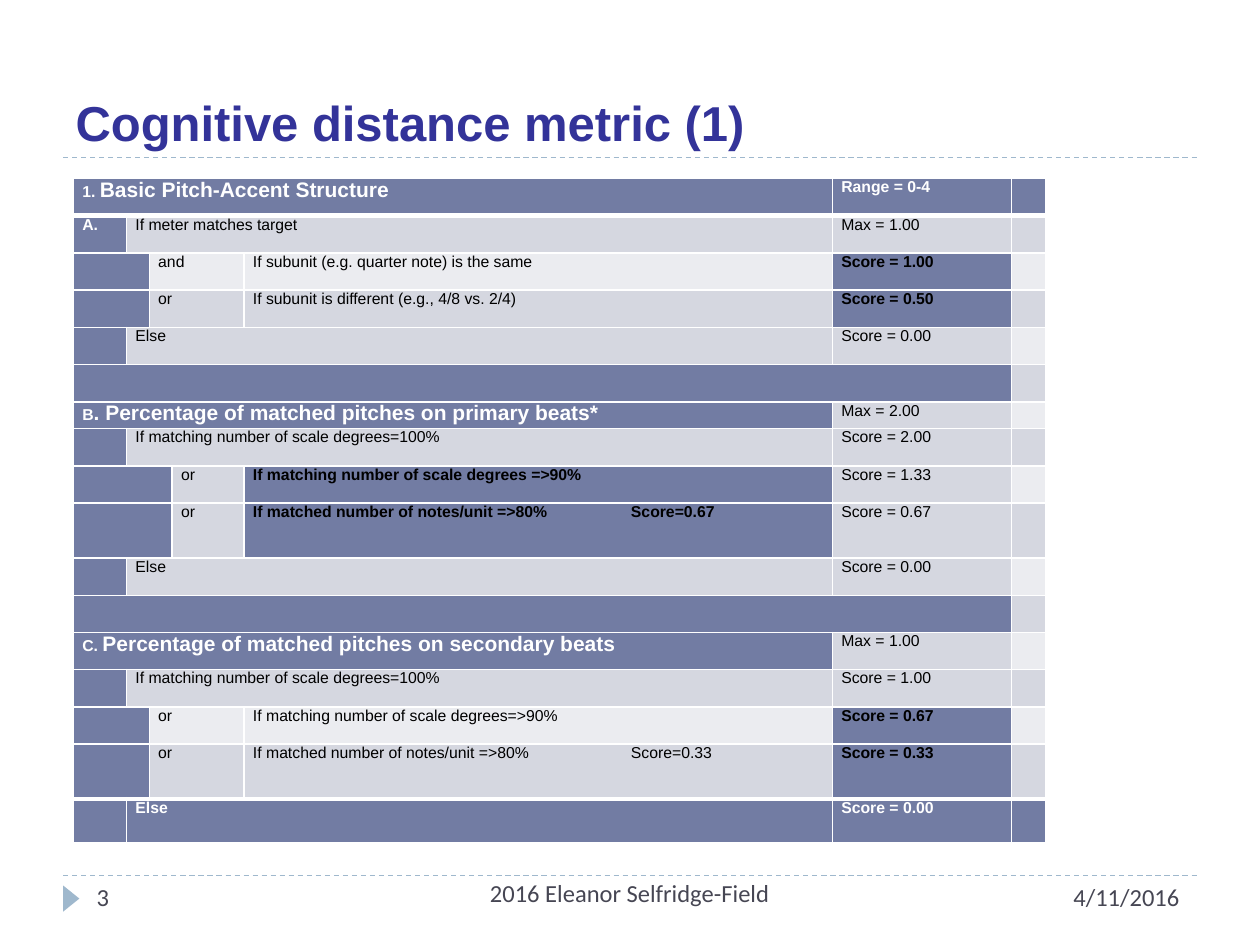
from lxml.etree import SubElement
from pptx import Presentation
from pptx.dml.color import RGBColor
from pptx.enum.dml import MSO_LINE_DASH_STYLE as DashStyle
from pptx.enum.shapes import MSO_CONNECTOR as Connector, MSO_SHAPE as Shape
from pptx.enum.text import MSO_ANCHOR as Anchor, MSO_AUTO_SIZE as AutoSize, PP_ALIGN as Align
from pptx.oxml.ns import qn
from pptx.util import Cm, Pt

SLATE, GREY, PALE, WHITE, BLACK = "727CA3", "D5D7E0", "EBECF0", "FFFFFF", "000000"
SKY = "9FB8CD"

COLUMN_WIDTHS = [1.07, 0.41, 0.41, 1.45, 11.86, 3.61, 0.69]
NORMAL_ROW = 0.75
SPECIAL_ROWS = {6: 0.54, 9: 1.11, 15: 1.11, 16: 0.87}
TAB_STOPS = [6.35, 7.62]

STYLES = {
    "head": (SLATE, WHITE, True),
    "strong": (SLATE, BLACK, True),
    "grey": (GREY, BLACK, False),
    "pale": (PALE, BLACK, False),
}


def section(number, heading, score, style="grey"):
    return [(5, [(number, 9), (heading, 12)], "head"), (1, score, style)]


def condition(text, score, label="", style="grey"):
    return [(1, label, "head"), (4, text, style), (1, score, style)]


def branch(indent, word, text, score, style="grey", text_style=None, score_style="grey"):
    return [(indent, "", "head"), (4 - indent, word, style),
            (1, text, text_style or style), (1, score, score_style)]


GAP = [(6, "", "head")]

ROWS = [
    section("1. ", "Basic Pitch-Accent Structure", "Range = 0-4", "head"),
    condition("If meter matches target", "Max = 1.00", label="A."),
    branch(2, "and", "If subunit (e.g. quarter note) is the same", "Score = 1.00",
           style="pale", score_style="strong"),
    branch(2, "or", "If subunit is different (e.g., 4/8 vs. 2/4)", "Score = 0.50",
           score_style="strong"),
    condition("Else", "Score = 0.00"),
    GAP,
    section("B", ". Percentage of matched pitches on primary beats*", "Max = 2.00"),
    condition("If matching number of scale degrees=100%", "Score = 2.00"),
    branch(3, "or", "If matching number of scale degrees =>90%", "Score = 1.33",
           text_style="strong"),
    branch(3, "or", "If matched number of notes/unit =>80%\t\tScore=0.67", "Score = 0.67",
           text_style="strong"),
    condition("Else", "Score = 0.00"),
    GAP,
    section("C. ", "Percentage of matched pitches on secondary beats", "Max = 1.00"),
    condition("If matching number of scale degrees=100%", "Score = 1.00"),
    branch(2, "or", "If matching number of scale degrees=>90%", "Score = 0.67",
           style="pale", score_style="strong"),
    branch(2, "or", "If matched number of notes/unit =>80%\t\tScore=0.33", "Score = 0.33",
           score_style="strong"),
    condition("Else", "Score = 0.00", style="head"),
]


def rgb(value):
    return RGBColor.from_string(value)


def add_run(paragraph, text, size=9, font="Arial", color=BLACK, bold=False):
    run = paragraph.add_run()
    run.text = text
    run.font.size = Pt(size)
    run.font.name = font
    run.font.bold = bold
    run.font.color.rgb = rgb(color)


def set_borders(cell, top=1, bottom=1):
    properties = cell._tc.get_or_add_tcPr()
    for side, width in (("L", 1), ("R", 1), ("T", top), ("B", bottom)):
        line = SubElement(properties, qn(f"a:ln{side}"), w=str(Pt(width)))
        SubElement(SubElement(line, qn("a:solidFill")), qn("a:srgbClr"), val=WHITE)


def set_tabs(paragraph):
    tab_list = SubElement(paragraph._p.get_or_add_pPr(), qn("a:tabLst"))
    for stop in TAB_STOPS:
        SubElement(tab_list, qn("a:tab"), pos=str(Cm(stop)), algn="l")


def fill_cell(cell, content, style):
    fill, color, bold = STYLES[style]
    cell.fill.solid()
    cell.fill.fore_color.rgb = rgb(fill)
    cell.margin_left = cell.margin_right = Cm(0.18)
    cell.margin_top = cell.margin_bottom = 0
    paragraph = cell.text_frame.paragraphs[0]
    runs = [(content, 9)] if isinstance(content, str) else content
    for text, size in runs:
        if "\t" in text:
            set_tabs(paragraph)
        if text:
            add_run(paragraph, text, size=size, color=color, bold=bold)
        else:
            SubElement(paragraph._p, qn("a:endParaRPr"), sz="900")


def add_metric_table(slide, left, top):
    heights = [SPECIAL_ROWS.get(index, NORMAL_ROW) for index in range(len(ROWS))]
    table = slide.shapes.add_table(len(ROWS), len(COLUMN_WIDTHS), Cm(left), Cm(top),
                                   Cm(sum(COLUMN_WIDTHS)), Cm(sum(heights))).table
    table.first_row = table.horz_banding = False
    for column, width in zip(table.columns, COLUMN_WIDTHS):
        column.width = Cm(width)
    last = len(ROWS) - 1
    for index, parts in enumerate(ROWS):
        table.rows[index].height = Cm(heights[index])
        for cell in table.rows[index].cells:
            set_borders(cell, top=3 if index in (1, last) else 1,
                        bottom=3 if index in (0, last - 1) else 1)
        edge = "head" if index in (0, last) else "grey" if index % 2 else "pale"
        column = 0
        for span, content, style in parts + [(1, "", edge)]:
            cell = table.cell(index, column)
            if span > 1:
                cell.merge(table.cell(index, column + span - 1))
            fill_cell(cell, content, style)
            column += span


def add_rule(slide, left, top, width):
    rule = slide.shapes.add_connector(Connector.STRAIGHT, Cm(left), Cm(top),
                                      Cm(left + width), Cm(top))
    rule.line.color.rgb = rgb(SKY)
    rule.line.width = Pt(0.75)
    rule.line.dash_style = DashStyle.DASH
    SubElement(rule._element.spPr, qn("a:effectLst"))


def add_title(slide, left, top, width, height):
    title = slide.shapes.title
    title.left, title.top, title.width, title.height = map(Cm, (left, top, width, height))
    frame = title.text_frame
    frame.auto_size = AutoSize.NONE
    frame.vertical_anchor = Anchor.BOTTOM
    paragraph = frame.paragraphs[0]
    paragraph.alignment = Align.LEFT
    add_run(paragraph, "Cognitive distance metric (1)", size=28, color="333399", bold=True)
    add_rule(slide, left, top + height, width)


def add_label(slide, text, left, top, width, align=Align.LEFT):
    frame = slide.shapes.add_textbox(Cm(left), Cm(top), Cm(width), Cm(1.02)).text_frame
    frame.word_wrap = True
    paragraph = frame.paragraphs[0]
    paragraph.alignment = align
    add_run(paragraph, text, size=14, font="Calibri", color="464653")


def add_footer(slide, left, top, width):
    add_rule(slide, left, top, width)
    marker = slide.shapes.add_shape(Shape.ISOSCELES_TRIANGLE, Cm(left - 0.1), Cm(top + 0.3),
                                    Cm(0.53), Cm(0.33))
    marker.rotation = 90
    marker.shadow.inherit = False
    marker.fill.solid()
    marker.fill.fore_color.rgb = rgb(SKY)
    marker.line.fill.background()
    add_label(slide, "2016 Eleanor Selfridge-Field", left + 7.83, top - 0.08, 7.19, Align.CENTER)
    add_label(slide, "3", left + 0.43, top, 5.51)
    add_label(slide, "4/11/2016", left + 20.12, top, 2.77)


def main():
    presentation = Presentation()
    presentation.slide_width, presentation.slide_height = Cm(25.4), Cm(19.05)
    slide = presentation.slides.add_slide(presentation.slide_layouts[5])
    add_title(slide, 1.27, 0.43, 22.86, 2.74)
    add_metric_table(slide, 1.48, 3.6)
    add_footer(slide, 1.27, 17.65, 22.86)
    presentation.save("out.pptx")


if __name__ == "__main__":
    main()
